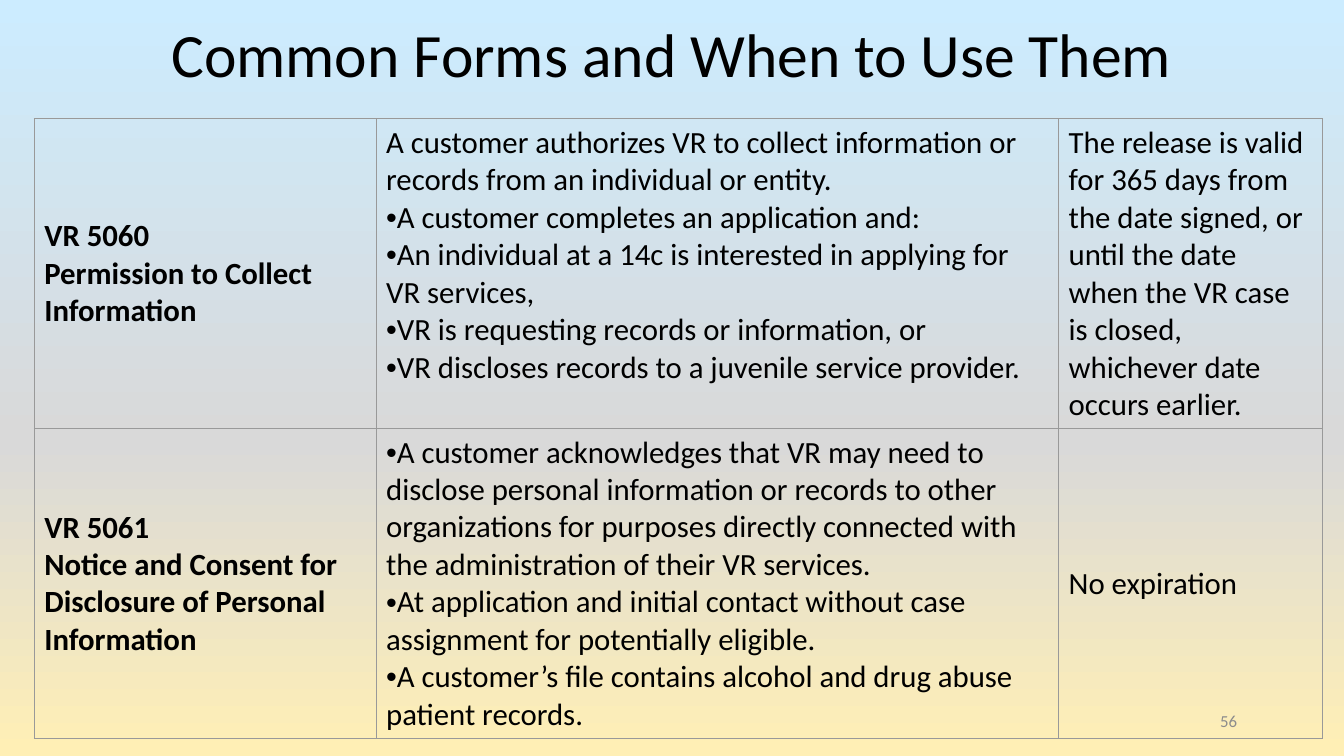
from copy import deepcopy

from lxml import etree
from pptx import Presentation
from pptx.dml.color import RGBColor
from pptx.enum.text import MSO_ANCHOR, MSO_AUTO_SIZE, PP_ALIGN
from pptx.oxml.ns import qn
from pptx.util import Inches, Pt

MIDDLE, TOP = MSO_ANCHOR.MIDDLE, MSO_ANCHOR.TOP
CENTER = PP_ALIGN.CENTER
NO_AUTOFIT = MSO_AUTO_SIZE.NONE

COLORS = {
    "sky": "CCECFF",
    "mist": "D9D9D9",
    "sand": "FFEFB5",
    "text": "000000",
    "page_number": "8C8C8C",
    "border": "999999",
}
FONT = "Calibri"
BULLET = "•"

# Paragraphs that start with the bullet sign become bulleted paragraphs.
FORMS = [
    (
        ["VR 5060", "Permission to Collect Information"],
        [
            "A customer authorizes VR to collect information or records from an "
            "individual or entity.",
            "•A customer completes an application and:",
            "•An individual at a 14c is interested in applying for VR services,",
            "•VR is requesting records or information, or",
            "•VR discloses records to a juvenile service provider.",
        ],
        ["The release is valid for 365 days from the date signed, or until the date "
         "when the VR case is closed, whichever date occurs earlier."],
    ),
    (
        ["VR 5061", "Notice and Consent for Disclosure of Personal Information"],
        [
            "•A customer acknowledges that VR may need to disclose personal "
            "information or records to other organizations for purposes directly "
            "connected with the administration of their VR services.",
            "•At application and initial contact without case assignment for "
            "potentially eligible.",
            "•A customer’s file contains alcohol and drug abuse patient records.",
        ],
        ["No expiration"],
    ),
]
COLUMN_WIDTHS = [3.39, 6.77, 2.62]
ROW_HEIGHT = 2.62
NAME_COLUMN, USE_COLUMN = 0, 1


def style_font(font, size, color, bold=False):
    font.name = FONT
    font.size = Pt(size)
    font.bold = bold
    font.color.rgb = RGBColor.from_string(COLORS[color])


def add_borders(cell):
    properties = cell._tc.get_or_add_tcPr()
    for position, side in enumerate(("lnL", "lnR", "lnT", "lnB")):
        line = etree.Element(qn(f"a:{side}"), w=str(Pt(0.75)))
        fill = etree.SubElement(line, qn("a:solidFill"))
        etree.SubElement(fill, qn("a:srgbClr"), val=COLORS["border"])
        properties.insert(position, line)


prs = Presentation()
prs.slide_width = Inches(13.33)
prs.slide_height = Inches(7.5)
slide = prs.slides.add_slide(prs.slide_layouts[5])

# Background: three-stop gradient running from top to bottom
backdrop = slide.background.fill
backdrop.gradient()
backdrop.gradient_angle = 270
stop_list = slide.element.find(".//" + qn("a:gsLst"))
stop_list.append(deepcopy(stop_list[-1]))
gradient = [(0, "sky"), (0.58, "mist"), (1, "sand")]
for stop, (position, color) in zip(backdrop.gradient_stops, gradient):
    stop.position = position
    stop.color.rgb = RGBColor.from_string(COLORS[color])

# Title
title = slide.shapes.title
title.left, title.top = Inches(0), Inches(0.15)
title.width, title.height = Inches(13.33), Inches(0.84)
title.text_frame.text = "Common Forms and When to Use Them"
title.text_frame.auto_size = NO_AUTOFIT
title.text_frame.vertical_anchor = MIDDLE
heading = title.text_frame.paragraphs[0]
heading.alignment = CENTER
heading.line_spacing = 0.9
style_font(heading.runs[0].font, 44, "text")

# Forms table
forms_table = slide.shapes.add_table(
    len(FORMS), len(COLUMN_WIDTHS), Inches(0.34), Inches(1.18),
    Inches(sum(COLUMN_WIDTHS)), Inches(ROW_HEIGHT * len(FORMS))).table
forms_table.first_row = False
forms_table.horz_banding = False
for column, width in zip(forms_table.columns, COLUMN_WIDTHS):
    column.width = Inches(width)

for row_index, form in enumerate(FORMS):
    forms_table.rows[row_index].height = Inches(ROW_HEIGHT)
    for column_index, lines in enumerate(form):
        cell = forms_table.cell(row_index, column_index)
        cell.fill.background()
        add_borders(cell)
        cell.vertical_anchor = TOP if column_index == USE_COLUMN else MIDDLE
        cell.text_frame.text = "\n".join(line.lstrip(BULLET) for line in lines)
        for paragraph, line in zip(cell.text_frame.paragraphs, lines):
            if line.startswith(BULLET):
                settings = paragraph._p.get_or_add_pPr()
                settings.set("marL", "0")
                settings.set("indent", "0")
                etree.SubElement(settings, qn("a:buFont"), typeface="Arial")
                etree.SubElement(settings, qn("a:buChar"), char=BULLET)
            style_font(paragraph.runs[0].font, 22, "text",
                       bold=column_index == NAME_COLUMN)

# Page number
page_number = slide.shapes.add_textbox(
    Inches(11.95), Inches(6.95), Inches(0.47), Inches(0.4)).text_frame
page_number.word_wrap = True
page_number.vertical_anchor = MIDDLE
page_number.text = "56"
page_number.paragraphs[0].alignment = CENTER
style_font(page_number.paragraphs[0].runs[0].font, 12, "page_number")

prs.save("out.pptx")
